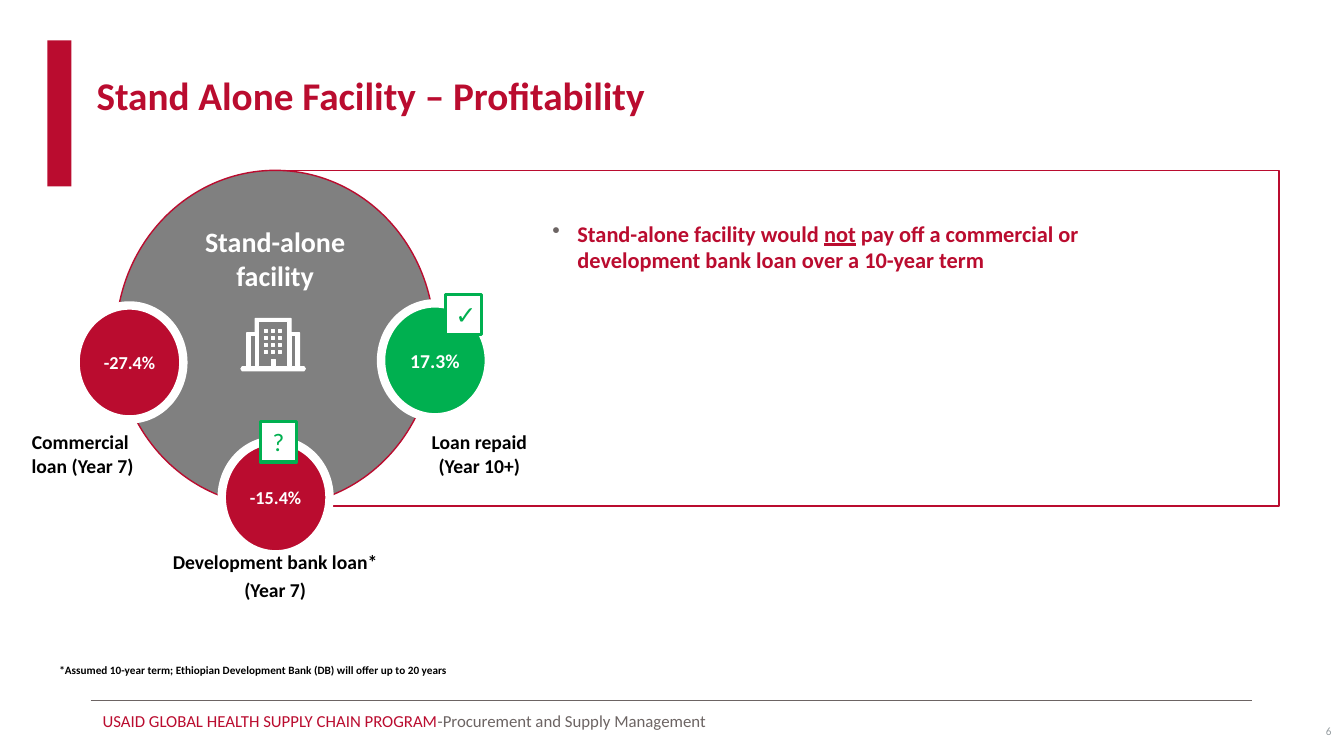
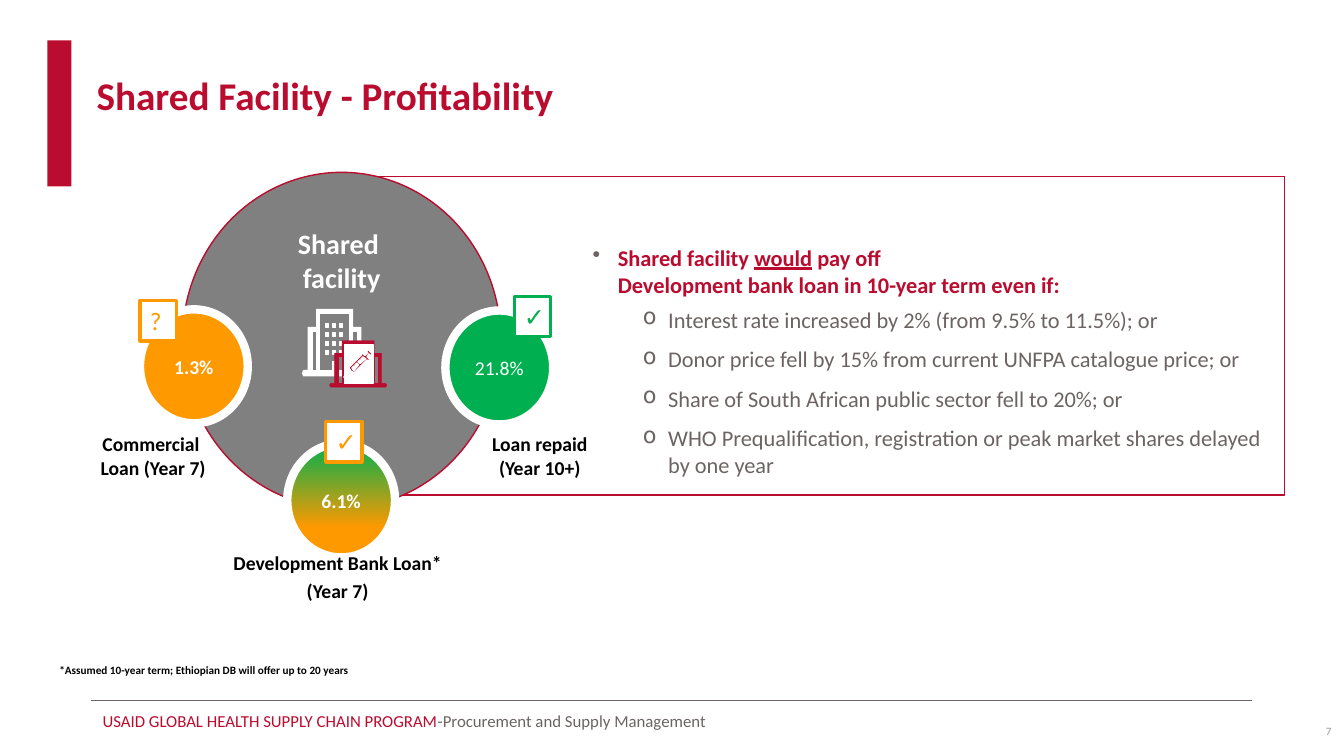
from copy import deepcopy

from lxml import etree
from pptx import Presentation
from pptx.dml.color import RGBColor
from pptx.enum.shapes import MSO_CONNECTOR, MSO_SHAPE
from pptx.enum.text import MSO_ANCHOR, PP_ALIGN
from pptx.oxml.ns import qn
from pptx.util import Pt

RECT, OVAL = MSO_SHAPE.RECTANGLE, MSO_SHAPE.OVAL
LEFT, MID, RIGHT = PP_ALIGN.LEFT, PP_ALIGN.CENTER, PP_ALIGN.RIGHT
TOP, CENTER, BOTTOM = MSO_ANCHOR.TOP, MSO_ANCHOR.MIDDLE, MSO_ANCHOR.BOTTOM

RED = RGBColor(0xBA, 0x0C, 0x2F)
GREEN = RGBColor(0x00, 0xB0, 0x50)
ORANGE = RGBColor(0xFF, 0x99, 0x00)
DISC = RGBColor(0x80, 0x80, 0x80)
GREY = RGBColor(0x6C, 0x64, 0x63)
PALE = RGBColor(0x95, 0x9C, 0xA0)
WHITE = RGBColor(0xFF, 0xFF, 0xFF)
BLACK = RGBColor(0, 0, 0)
FONT = "Calibri"

FOOTER = [("USAID GLOBAL HEALTH SUPPLY CHAIN PROGRAM", RED),
          ("-Procurement and Supply Management", GREY)]

# Each rate: left, top, text, fill (a list fades down), size, bold.
# Each badge: left, top, sign, colour, align.
# Each label: centre, top, lines, space after.
SLIDES = [
    dict(
        number="6",
        title="Stand Alone Facility – Profitability",
        frame=(195, 121.7, 718.5, 239.8),
        disc=(82.8, 121.7),
        name=["Stand-alone facility"],
        rates=[(54, 218.2, "-27.4%", RED, 13, True),
               (158.4, 314.6, "-15.4%", RED, 13, True),
               (272.2, 216.7, "17.3%", GREEN, 14, True)],
        labels=[(59, 303.8, ["Commercial \nloan (Year 7)"], 3),
                (196.6, 389.5, ["Development bank loan*", "(Year 7)"], 3),
                (342.4, 303.8, ["Loan repaid", "(Year 10+)"], 0)],
        badges=[(318.2, 210.2, "✓", GREEN, LEFT),
                (185.8, 301, "?", GREEN, MID)],
        note="*Assumed 10-year term; Ethiopian Development Bank (DB) will offer up to 20 years",
        body=(387.4, 153.4, 525.6, 171),
        point=["Stand-alone facility would ", "not",
               " pay off a commercial or\ndevelopment bank loan over a 10-year term"],
        subs=[],
        tower=(172.1, 227.5, 46, 37.4),
        clinic=None,
    ),
    dict(
        number="7",
        title="Shared Facility - Profitability",
        frame=(232.6, 126, 684.7, 227.5),
        disc=(130.3, 123.1),
        name=["Shared ", "facility"],
        rates=[(100, 221, "1.3%", ORANGE, 14, True),
               (205.2, 316.8, "6.1%", [GREEN, ORANGE], 14, True),
               (318.2, 221.8, "21.8%", GREEN, 14, False)],
        labels=[(109.4, 305.3, ["Commercial \nLoan (Year 7)"], 3),
                (241.2, 390.2, ["Development Bank Loan*", "(Year 7)"], 3),
                (385.6, 305.3, ["Loan repaid", "(Year 10+)"], 0)],
        badges=[(100, 214.6, "?", ORANGE, LEFT),
                (367.2, 211.7, "✓", GREEN, LEFT),
                (232.6, 301, "✓", ORANGE, LEFT)],
        note="*Assumed 10-year term; Ethiopian DB will offer up to 20 years",
        body=(416.2, 170.6, 509, 171),
        point=["Shared facility ", "would",
               " pay off \nDevelopment bank loan in 10-year term even if:"],
        subs=["Interest rate increased by 2% (from 9.5% to 11.5%); or",
              "Donor price fell by 15% from current UNFPA catalogue price; or",
              "Share of South African public sector fell to 20%; or",
              "WHO Prequalification, registration or peak market shares delayed by one year"],
        tower=(216, 221, 46, 47.5),
        clinic=(235.4, 243.4, 41, 33.1),
    ),
]

# Icon outlines, in percent of the icon's width and height
HOUSE = [
    [(98, 92), (91, 92), (91, 27), (78, 27), (78, 0), (22, 0), (22, 27), (9, 27),
     (9, 92), (2, 92), (0, 96), (2, 100), (98, 100), (100, 96)],
    [(85, 33), (85, 92), (78, 92), (78, 33)],
    [(27, 6), (73, 6), (73, 92), (53, 92), (53, 79), (47, 79), (47, 92), (27, 92)],
    [(15, 33), (22, 33), (22, 92), (15, 92)],
]
# Syringe outline, in steps of 1/28 of its box
NEEDLE = [
    [(24, 0), (23, 2), (24, 3), (21, 6), (18, 3), (17, 4), (18, 5), (5, 18), (7, 20),
     (0, 27), (1, 28), (8, 21), (10, 23), (23, 10), (24, 11), (26, 10), (23, 7),
     (25, 4), (26, 6), (28, 4)],
    [(8, 18), (10, 16), (11, 17), (12, 16), (11, 15), (13, 13), (15, 15), (10, 21)],
    [(16, 14), (14, 12), (16, 10), (17, 11), (18, 9), (17, 9), (19, 7), (22, 9)],
]


def put(p, text, size, color, bold=False, under=False):
    """Add one run per line of text, with breaks of the same size between."""
    for i, part in enumerate(text.split("\n")):
        if i:
            p.add_line_break()
            p._p[-1].append(deepcopy(run._r.rPr))
        run = p.add_run()
        run.text = part
        font = run.font
        font.name, font.size, font.bold = FONT, Pt(size), bold
        font.color.rgb = color
        if under:
            font.underline = True


def setup(shape, anchor=TOP, inset=None):
    frame = shape.text_frame
    frame.word_wrap = True
    frame.vertical_anchor = anchor
    if inset is not None:
        frame.margin_left = frame.margin_right = Pt(inset)
        frame.margin_top = frame.margin_bottom = Pt(inset)
    return frame


def write(frame, lines, size, color, bold=False, align=LEFT, after=0):
    for i, line in enumerate(lines):
        p = frame.add_paragraph() if i else frame.paragraphs[0]
        p.alignment = align
        p.space_after = Pt(after)
        put(p, line, size, color, bold)


def add_box(slide, box, anchor=TOP, inset=None):
    return setup(slide.shapes.add_textbox(*map(Pt, box)), anchor, inset)


def paint(shape, fill, line, width):
    shape.shadow.inherit = False
    if fill is None:
        shape.fill.background()
    elif isinstance(fill, list):
        shape.fill.gradient()
        shape.fill.gradient_angle = 270
        for stop, color, pos in zip(shape.fill.gradient_stops, fill, (0, 0.74)):
            stop.color.rgb, stop.position = color, pos
    else:
        shape.fill.solid()
        shape.fill.fore_color.rgb = fill
    if line is None:
        shape.line.fill.background()
    else:
        shape.line.color.rgb = line
        shape.line.width = Pt(width)


def add_shape(slide, kind, box, fill=None, line=None, width=1):
    shape = slide.shapes.add_shape(kind, *map(Pt, box))
    paint(shape, fill, line, width)
    return shape


def draw(slide, loops, box, unit, fill, line, width):
    """Draw closed loops, given in 1/unit of the box, as one outline with holes."""
    x, y, w, h = box
    rings = [[(Pt(x + w * a / unit), Pt(y + h * b / unit)) for a, b in loop]
             for loop in loops]
    pen = slide.shapes.build_freeform(*rings[0][0], scale=1.0)
    for i, ring in enumerate(rings):
        if i:
            pen.move_to(*ring[0])
        pen.add_line_segments(ring[1:], close=True)
    paint(pen.convert_to_shape(), fill, line, width)


def add_tower(slide, box):
    x, y, w, h = box
    for col in range(3):
        for row in range(4):
            pane = (x + w * (0.36 + 0.11 * col), y + h * (0.21 + 0.135 * row),
                    w * 0.05, h * 0.06)
            add_shape(slide, RECT, pane, WHITE, WHITE, 0.75)
    draw(slide, HOUSE, box, 100, WHITE, WHITE, 0.75)


def add_clinic(slide, box):
    x, y, w, h = box
    draw(slide, HOUSE, box, 100, RED, RED, 0.25)
    add_shape(slide, RECT, (x + 10.8, y + 2.8, 20.2, 28), WHITE, WHITE)
    draw(slide, NEEDLE, (x + 10.1, y + 6.4, 20.2, 20.2), 28, RED, WHITE, 0.75)


def add_bullet(p, sign, indent, before, after):
    p.space_before, p.space_after = Pt(before), Pt(after)
    props = p._p.get_or_add_pPr()
    props.set("marL", str(Pt(indent)))
    props.set("indent", str(-Pt(18)))
    color = etree.SubElement(props, qn("a:buClr"))
    etree.SubElement(color, qn("a:srgbClr"), val=str(GREY))
    etree.SubElement(props, qn("a:buChar"), char=sign)


def add_body(slide, box, point, subs):
    frame = add_box(slide, box)
    p = frame.paragraphs[0]
    add_bullet(p, "•", 18, 0, 0)
    for i, text in enumerate(point):
        put(p, text, 16, RED, True, under=i == 1)
    for i, text in enumerate(subs):
        p = frame.add_paragraph()
        p.level = 1
        add_bullet(p, "o", 54, 3 if i else 6, 6)
        put(p, text, 16, GREY)


def add_base(slide, title, number):
    add_shape(slide, RECT, (33.8, 28.8, 17.3, 104.4), RED)
    rule = slide.shapes.add_connector(MSO_CONNECTOR.STRAIGHT,
                                      Pt(64.8), Pt(500.4), Pt(894.2), Pt(500.4))
    rule.line.color.rgb, rule.line.width = GREY, Pt(0.5)
    etree.SubElement(rule._element.spPr, qn("a:effectLst"))
    p = add_box(slide, (66.2, 504, 714.2, 21.6)).paragraphs[0]
    for text, color in FOOTER:
        put(p, text, 12, color)
    write(add_box(slide, (923, 515.5, 28.1, 13.7), CENTER, 0), [number], 8, PALE, align=RIGHT)
    head = add_box(slide, (61.9, 28.1, 892.8, 60.5), BOTTOM)
    write(head, [title], 28, RED, True)
    head.paragraphs[0].line_spacing = 0.9


def add_page(deck, data):
    slide = deck.slides.add_slide(deck.slide_layouts[6])
    add_base(slide, data["title"], data["number"])
    add_shape(slide, RECT, data["frame"], None, RED)
    disc = add_shape(slide, OVAL, (*data["disc"], 227.5, 239.8), DISC, RED)
    write(setup(disc), data["name"], 20, WHITE, True, MID)
    for x, y, text, fill, size, bold in data["rates"]:
        rate = add_shape(slide, OVAL, (x, y, 77, 81.4), fill, WHITE, 6)
        write(setup(rate, CENTER), [text], size, WHITE, bold, MID)
    for mid, y, lines, after in data["labels"]:
        wide = 200 if y > 350 else 110
        label = add_box(slide, (mid - wide / 2, y, wide, 42))
        write(label, lines, 14, BLACK, True, MID, after)
    for x, y, sign, color, align in data["badges"]:
        badge = add_shape(slide, RECT, (x, y, 26, 29), WHITE, color, 2.25)
        write(setup(badge), [sign], 18, color, align=align)
    write(add_box(slide, (35.3, 470.2, 460.8, 17)), [data["note"]], 8, BLACK, True)
    add_body(slide, data["body"], data["point"], data["subs"])
    add_tower(slide, data["tower"])
    if data["clinic"]:
        add_clinic(slide, data["clinic"])


def main():
    deck = Presentation()
    deck.slide_width, deck.slide_height = Pt(960), Pt(540)
    for data in SLIDES:
        add_page(deck, data)
    deck.save("out.pptx")


if __name__ == "__main__":
    main()
